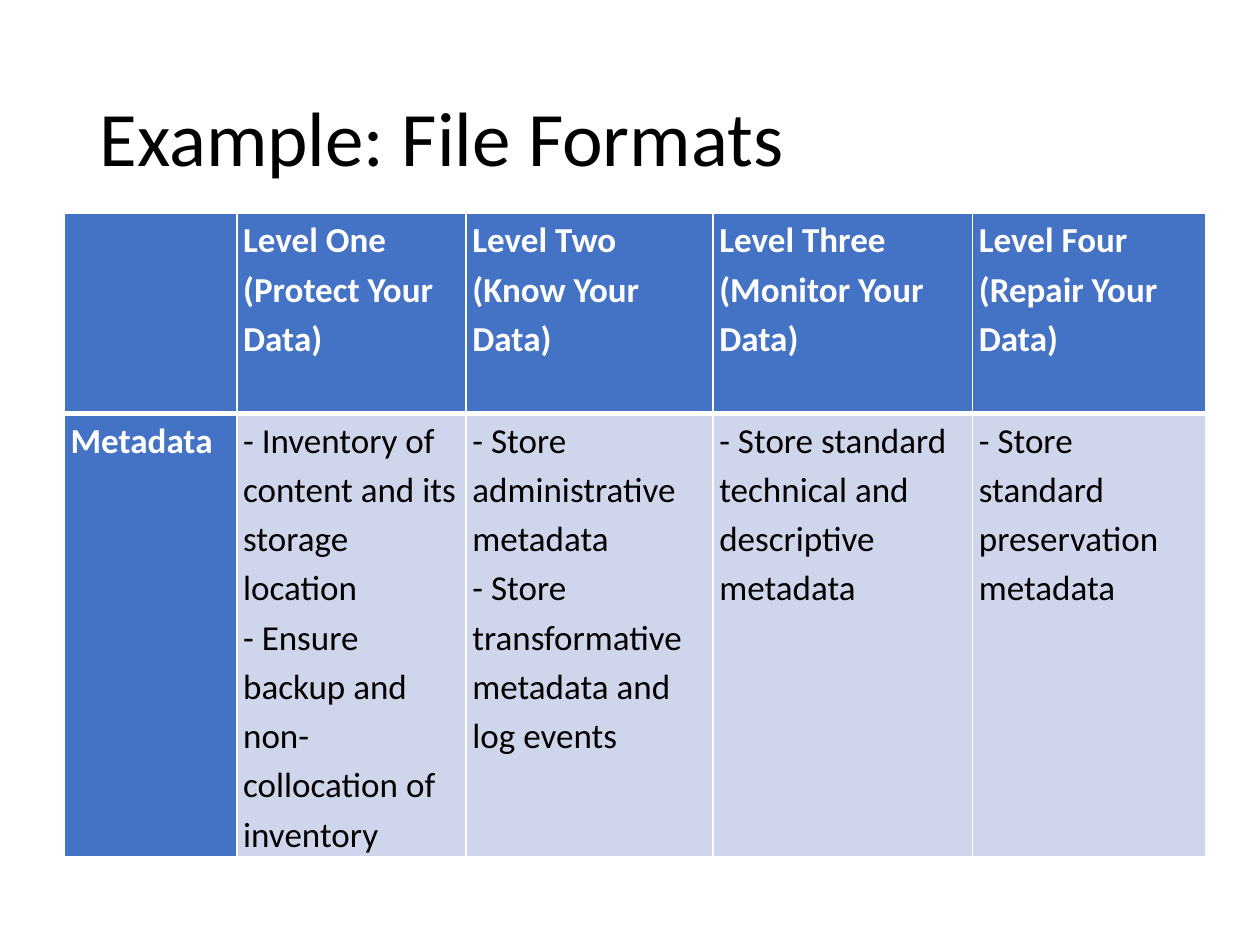
from lxml import etree
from pptx import Presentation
from pptx.dml.color import RGBColor
from pptx.enum.text import MSO_ANCHOR, PP_ALIGN
from pptx.oxml.ns import qn
from pptx.util import Inches, Pt

MIDDLE = MSO_ANCHOR.MIDDLE
LEFT = PP_ALIGN.LEFT
FONT = "Calibri"
HUES = {"ink": "000000", "paper": "FFFFFF", "head": "4472C4", "body": "CFD5EA"}
WIDE, HIGH = 10, 7.5
COLS = [1.37, 1.82, 1.96, 2.06, 1.85]
ROWS = [1.59, 3.17]
GRID = [
    [
        [],
        ["Level One (Protect Your Data)"],
        ["Level Two (Know Your Data)"],
        ["Level Three (Monitor Your Data)"],
        ["Level Four (Repair Your Data)"],
    ],
    [
        ["Metadata"],
        [
            "- Inventory of content and its storage location",
            "- Ensure backup and non-collocation of inventory",
        ],
        [
            "- Store administrative metadata",
            "- Store transformative metadata and log events",
        ],
        ["- Store standard technical and descriptive metadata"],
        ["- Store standard preservation metadata"],
    ],
]


def color(name):
    return RGBColor.from_string(HUES[name])


def style(para, size, hue, bold, space):
    para.alignment = LEFT
    para.line_spacing = space
    para.font.name = FONT
    para.font.size = Pt(size)
    para.font.bold = bold
    para.font.color.rgb = color(hue)


def add_title(slide, box, text):
    title = slide.shapes.title
    title.left, title.top, title.width, title.height = map(Inches, box)
    frame = title.text_frame
    frame.text = text
    frame.word_wrap = True
    frame.vertical_anchor = MIDDLE
    style(frame.paragraphs[0], 44, "ink", False, 0.9)


def add_edge(cell, side, width):
    props = cell._tc.get_or_add_tcPr()
    line = etree.SubElement(props, qn(f"a:ln{side}"), w=str(Pt(width)))
    fill = etree.SubElement(line, qn("a:solidFill"))
    etree.SubElement(fill, qn("a:srgbClr"), val=HUES["paper"])


def fill_cell(cell, lines, row, col):
    head = row == 0 or col == 0
    cell.margin_left = cell.margin_right = Inches(0.05)
    cell.margin_top = cell.margin_bottom = 0
    for side in "LRTB":
        thick = (row, side) in ((0, "B"), (1, "T"))
        add_edge(cell, side, 3 if thick else 1)
    cell.fill.solid()
    cell.fill.fore_color.rgb = color("head" if head else "body")
    cell.text_frame.text = "\n".join(lines)
    for para in cell.text_frame.paragraphs:
        style(para, 20, "paper" if head else "ink", head, 1.15)


def add_grid(slide, box):
    left, top, width, height = map(Inches, box)
    table = slide.shapes.add_table(
        len(ROWS), len(COLS), left, top, width, height
    ).table
    table.first_col = True
    table.horz_banding = False
    for col, size in zip(table.columns, COLS):
        col.width = Inches(size)
    for row, size in zip(table.rows, ROWS):
        row.height = Inches(size)
    for row, cells in enumerate(GRID):
        for col, lines in enumerate(cells):
            fill_cell(table.cell(row, col), lines, row, col)


def main():
    deck = Presentation()
    deck.slide_width, deck.slide_height = Inches(WIDE), Inches(HIGH)
    slide = deck.slides.add_slide(deck.slide_layouts[5])
    add_title(slide, (0.69, 0.4, 8.62, 1.45), "Example: File Formats")
    add_grid(slide, (0.51, 1.69, sum(COLS), sum(ROWS)))
    deck.save("out.pptx")


if __name__ == "__main__":
    main()
